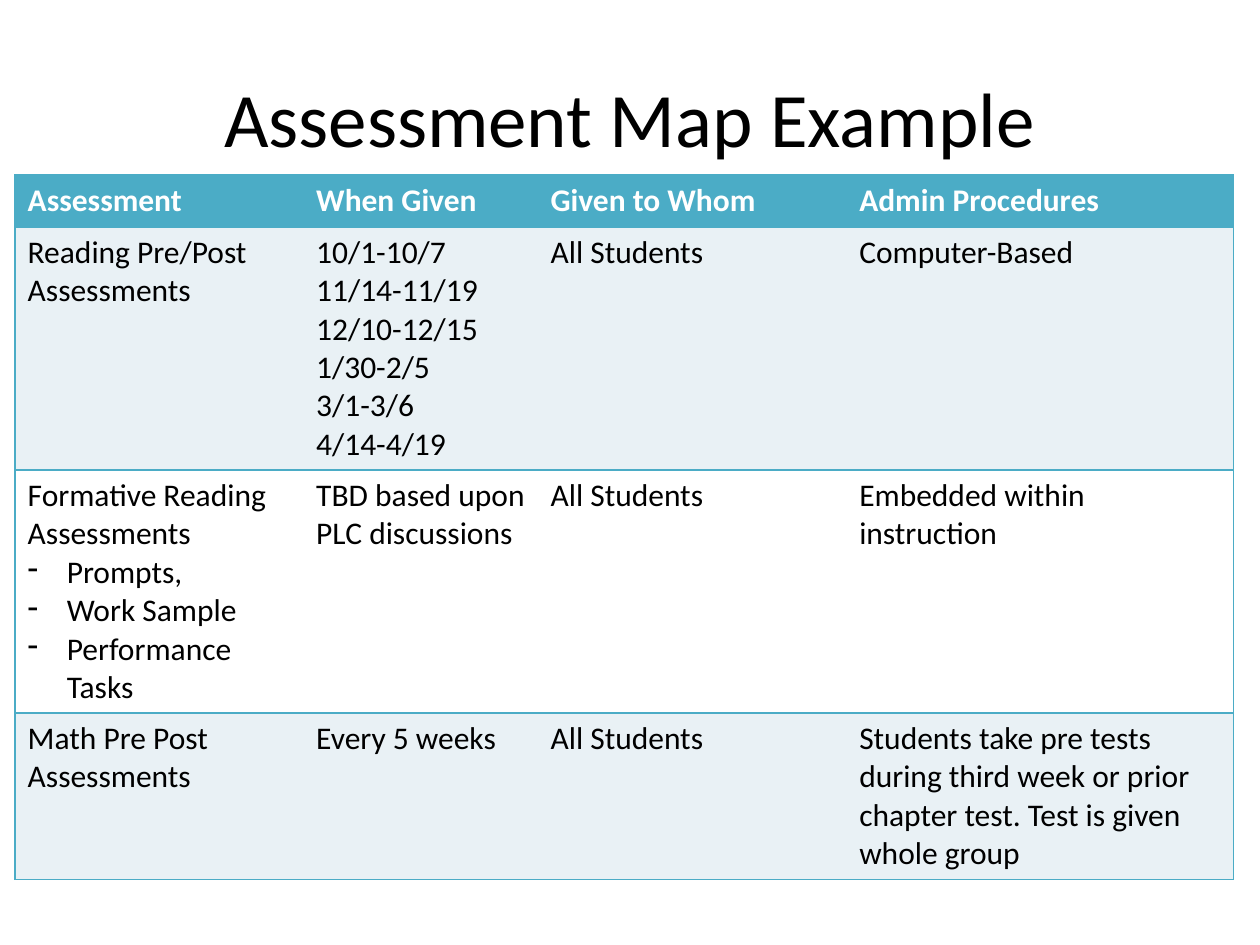
from dataclasses import dataclass

from lxml import etree
from pptx import Presentation
from pptx.dml.color import RGBColor
from pptx.enum.text import MSO_ANCHOR, PP_ALIGN
from pptx.oxml.ns import qn
from pptx.util import Inches, Pt

CENTER = PP_ALIGN.CENTER
MIDDLE = MSO_ANCHOR.MIDDLE
NO_STYLE_NO_GRID = "{2D5ABB26-0587-4C30-8999-92F81FD0307C}"
DASH = "- "  # opens a dashed list item in the cell text


@dataclass(frozen=True)
class Theme:
    font: str = "Calibri"
    title_size: int = 44
    table_size: int = 18
    border_width: int = 1
    ink: str = "000000"
    accent: str = "4BACC6"
    band: str = "E9F1F5"
    paper: str = "FFFFFF"


class SlideBuilder:
    def __init__(self, slide, theme):
        self.slide = slide
        self.theme = theme

    def style(self, paragraph, size, color, bold=False):
        font = paragraph.font
        font.name, font.size, font.bold = self.theme.font, Pt(size), bold
        font.color.rgb = RGBColor.from_string(color)

    def title(self, text, left, top, width, height):
        frame = self.slide.shapes.add_textbox(
            Inches(left), Inches(top), Inches(width), Inches(height)).text_frame
        frame.word_wrap = True
        frame.vertical_anchor = MIDDLE
        heading = frame.paragraphs[0]
        heading.text = text
        heading.alignment = CENTER
        self.style(heading, self.theme.title_size, self.theme.ink)

    def dash(self, paragraph):
        properties = paragraph._p.get_or_add_pPr()
        properties.set("marL", str(Inches(0.31)))
        properties.set("indent", str(-Inches(0.31)))
        etree.SubElement(properties, qn("a:buChar"), char=DASH.strip())

    def borders(self, cell, sides):
        properties = cell._tc.get_or_add_tcPr()
        for position, side in enumerate(sides):
            line = etree.Element(qn(f"a:ln{side}"), w=str(Pt(self.theme.border_width)))
            fill = etree.SubElement(line, qn("a:solidFill"))
            etree.SubElement(fill, qn("a:srgbClr"), val=self.theme.accent)
            properties.insert(position, line)

    def cell(self, cell, text, fill, color, bold):
        cell.fill.solid()
        cell.fill.fore_color.rgb = RGBColor.from_string(fill)
        frame = cell.text_frame
        for index, entry in enumerate(text.split("\n")):
            paragraph = frame.add_paragraph() if index else frame.paragraphs[0]
            paragraph.text = entry.removeprefix(DASH)
            if entry.startswith(DASH):
                self.dash(paragraph)
            self.style(paragraph, self.theme.table_size, color, bold)

    def table(self, rows, left, top, widths, heights):
        theme = self.theme
        table = self.slide.shapes.add_table(
            len(rows), len(widths), Inches(left), Inches(top),
            Inches(sum(widths)), Inches(sum(heights))).table
        table._tbl.tblPr.find(qn("a:tableStyleId")).text = NO_STYLE_NO_GRID
        for column, width in zip(table.columns, widths):
            column.width = Inches(width)
        for row, height in zip(table.rows, heights):
            row.height = Inches(height)

        last = len(widths) - 1
        for r, row in enumerate(rows):
            header = r == 0
            fill = theme.accent if header else theme.band if r % 2 else theme.paper
            color = theme.paper if header else theme.ink
            for c, text in enumerate(row):
                cell = table.cell(r, c)
                self.cell(cell, text, fill, color, header)
                # Horizontal rules everywhere, vertical ones on the outside only
                outer = "L" if c == 0 else "R" if c == last else ""
                self.borders(cell, outer + "TB")


ASSESSMENT_MAP = [
    ["Assessment", "When Given", "Given to Whom", "Admin Procedures"],
    ["Reading Pre/Post Assessments",
     "10/1-10/7\n11/14-11/19\n12/10-12/15\n1/30-2/5\n3/1-3/6\n4/14-4/19",
     "All Students", "Computer-Based"],
    ["Formative Reading Assessments\n- Prompts,\n- Work Sample\n- Performance Tasks",
     "TBD based upon PLC discussions", "All Students", "Embedded within instruction"],
    ["Math Pre Post Assessments", "Every 5 weeks", "All Students",
     "Students take pre tests during third week or prior chapter test. "
     "Test is given whole group"],
]


def main():
    deck = Presentation()
    deck.slide_width, deck.slide_height = Inches(10), Inches(7.5)
    builder = SlideBuilder(deck.slides.add_slide(deck.slide_layouts[6]), Theme())

    # Heading
    builder.title("Assessment Map Example", 0.5, 0.3, 9, 1.25)

    # Assessment map
    builder.table(ASSESSMENT_MAP, 0.12, 1.39,
                  widths=[2.29, 1.86, 2.45, 3.07], heights=[0.41, 1.93, 1.93, 1.32])

    deck.save("out.pptx")


if __name__ == "__main__":
    main()
